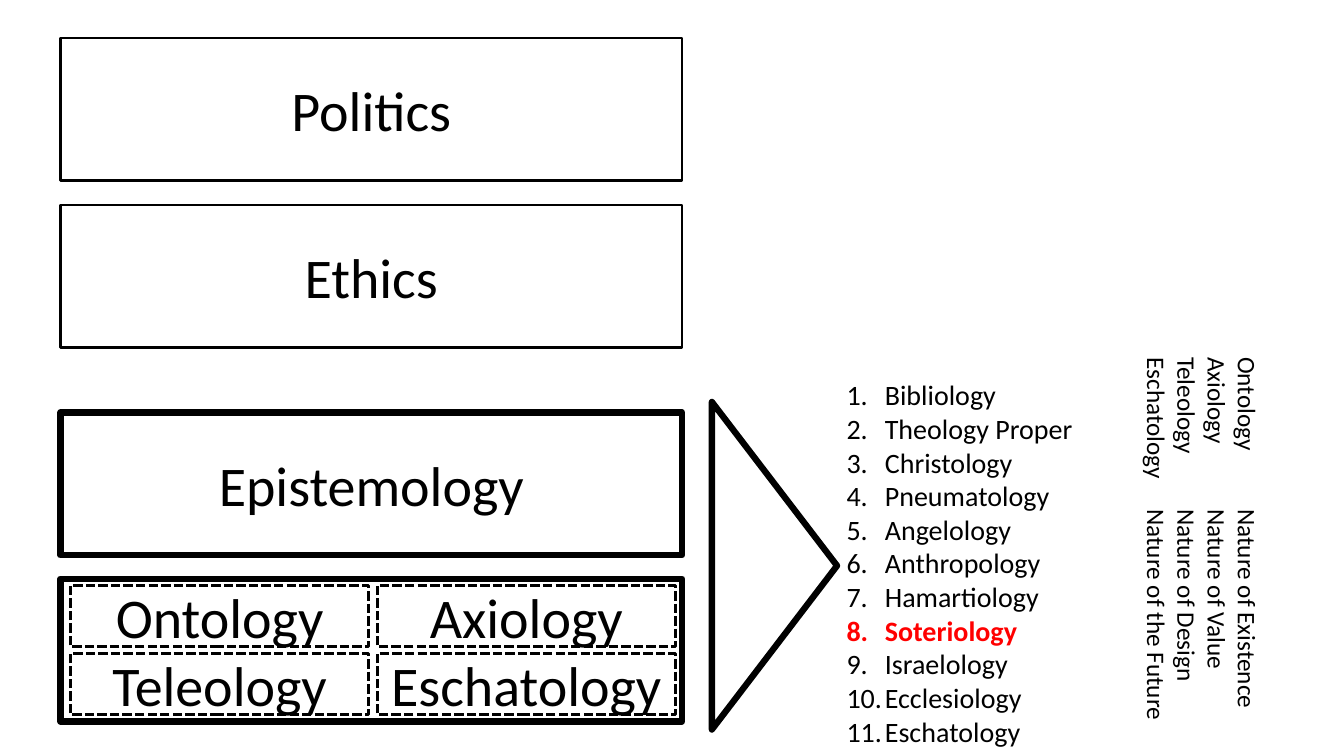
from lxml.etree import SubElement
from pptx import Presentation
from pptx.dml.color import RGBColor
from pptx.enum.dml import MSO_LINE
from pptx.enum.shapes import MSO_SHAPE
from pptx.enum.text import MSO_ANCHOR, MSO_AUTO_SIZE, PP_ALIGN
from pptx.oxml.ns import qn
from pptx.util import Inches, Pt

COLORS = {"ink": "000000", "paper": "FFFFFF", "accent": "FF0000"}
COLUMNS, ROWS = 160, 90
LEFT, WIDTH, HEIGHT = 7.2, 74, 17
THICK, THIN, DASHED = 4.5, 1.75, 2.25

BRANCHES = [("Politics", 4.5, THIN), ("Ethics", 24.4, THIN), ("Epistemology", 49.1, THICK)]
FOUNDATIONS = [
    ("Ontology", "Nature of Existence"),
    ("Axiology", "Nature of Value"),
    ("Teleology", "Nature of Design"),
    ("Eschatology", "Nature of the Future"),
]
DOCTRINES = [
    "Bibliology", "Theology Proper", "Christology", "Pneumatology",
    "Angelology", "Anthropology", "Hamartiology", "Soteriology",
    "Israelology", "Ecclesiology", "Eschatology",
]


class Canvas:
    """Draws on one slide, with lengths in cells of a 160 by 90 grid."""

    def __init__(self, deck):
        self.font = "Calibri"
        self.column = deck.slide_width / COLUMNS
        self.row = deck.slide_height / ROWS
        self.slide = deck.slides.add_slide(deck.slide_layouts[6])

    def place(self, left, top, width, height):
        return (round(left * self.column), round(top * self.row),
                round(width * self.column), round(height * self.row))

    def style(self, para, size, color="ink", bold=False):
        para.font.name = self.font
        para.font.size = Pt(size)
        para.font.bold = bold
        para.font.color.rgb = RGBColor.from_string(COLORS[color])

    def outline(self, kind, place, weight, parent=None):
        shapes = (parent or self.slide).shapes
        shape = shapes.add_shape(kind, *self.place(*place))
        shape.shadow.inherit = False
        shape.fill.background()
        shape.line.color.rgb = RGBColor.from_string(COLORS["ink"])
        shape.line.width = Pt(weight)
        return shape

    def box(self, label, place, weight, parent=None):
        box = self.outline(MSO_SHAPE.RECTANGLE, place, weight, parent)
        box.text_frame.vertical_anchor = MSO_ANCHOR.MIDDLE
        para = box.text_frame.paragraphs[0]
        para.text = label
        para.alignment = PP_ALIGN.CENTER
        self.style(para, 40)
        return box

    def triangle(self, place, weight):
        triangle = self.outline(MSO_SHAPE.ISOSCELES_TRIANGLE, place, weight)
        triangle.fill.solid()
        triangle.fill.fore_color.rgb = RGBColor.from_string(COLORS["paper"])
        triangle.rotation = 90

    def text(self, lines, place, rotation=0):
        """Add a text box and return its paragraphs, one for each line."""
        box = self.slide.shapes.add_textbox(*self.place(*place))
        box.rotation = rotation
        frame = box.text_frame
        frame.word_wrap = True
        frame.auto_size = MSO_AUTO_SIZE.SHAPE_TO_FIT_TEXT
        frame.text = "\n".join(lines)
        return frame.paragraphs

    def numbered_list(self, items, place, highlight):
        for para in self.text(items, place):
            properties = para._p.get_or_add_pPr()
            properties.set("marL", str(Inches(0.38)))
            properties.set("indent", str(Inches(-0.38)))
            SubElement(properties, qn("a:buFont"), typeface="+mj-lt")
            SubElement(properties, qn("a:buAutoNum"), type="arabicPeriod")
            chosen = para.text == highlight
            self.style(para, 20, "accent" if chosen else "ink", chosen)

    def glossary(self, pairs, place):
        """Add sideways lines, each a term and its meaning at a tab stop."""
        for para in self.text(["\t".join(pair) for pair in pairs], place, 90):
            tabs = SubElement(para._p.get_or_add_pPr(), qn("a:tabLst"))
            SubElement(tabs, qn("a:tab"), pos=str(Inches(1.51)), algn="l")
            self.style(para, 18)


def main():
    deck = Presentation()
    deck.slide_width, deck.slide_height = Inches(13.333), Inches(7.5)
    canvas = Canvas(deck)

    for label, top, weight in BRANCHES:
        canvas.box(label, (LEFT, top, WIDTH, HEIGHT), weight)

    base = canvas.slide.shapes.add_group_shape()
    canvas.outline(MSO_SHAPE.RECTANGLE, (LEFT, 68.9, WIDTH, HEIGHT), THICK, base)
    for index, (label, _) in enumerate(FOUNDATIONS):
        row, column = divmod(index, 2)
        place = (8.4 + 36.5 * column, 69.7 + 8.1 * row, 35.5, 7.3)
        box = canvas.box(label, place, DASHED, base)
        box.line.dash_style = MSO_LINE.SQUARE_DOT

    canvas.numbered_list(DOCTRINES, (99.6, 44.4, 39.4, 45.6), "Soteriology")
    canvas.triangle((72.7, 59.9, 39, 14.9), THICK)
    canvas.glossary(FOUNDATIONS, (118.8, 57.8, 48.6, 15.7))
    deck.save("out.pptx")


if __name__ == "__main__":
    main()
